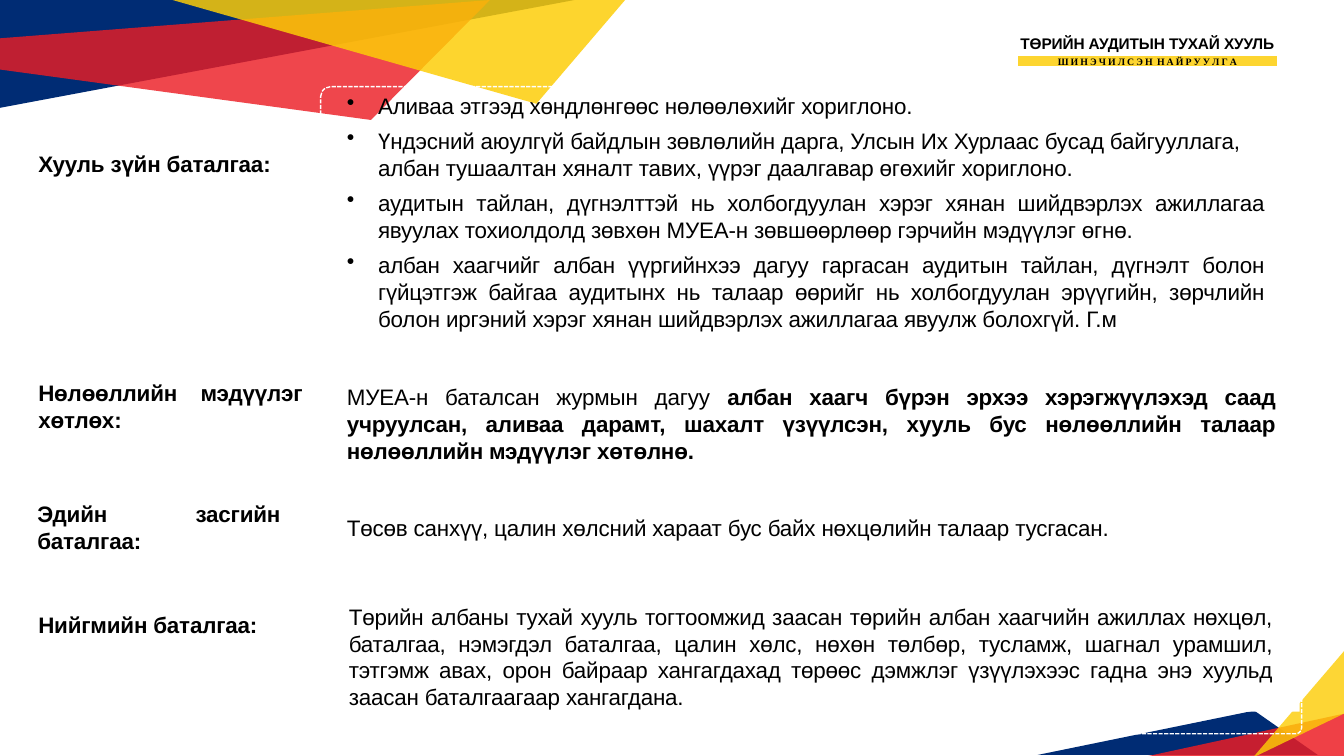
from dataclasses import dataclass

from lxml import etree
from pptx import Presentation
from pptx import util as u
from pptx.dml.color import RGBColor
from pptx.enum import dml, shapes, text
from pptx.oxml.ns import qn


@dataclass(frozen=True)
class Theme:
    navy: str = "002C74"
    red: str = "EC1C23"
    yellow: str = "FDCD07"
    banner: str = "FDD530"
    white: str = "FFFFFF"
    black: str = "000000"
    sans: str = "Arial"
    serif: str = "Times New Roman"
    body: float = 16
    heading: float = 11
    small: float = 7


class Page:
    def __init__(self, slide, theme):
        self.slide = slide
        self.theme = theme

    def fill(self, shape, color, alpha=100):
        shape.fill.solid()
        shape.fill.fore_color.rgb = RGBColor.from_string(color)
        if alpha < 100:
            tint = shape.fill._xPr.find(qn("a:solidFill"))[0]
            etree.SubElement(tint, qn("a:alpha")).set("val", str(alpha * 1000))

    def polygon(self, points, color, alpha=100):
        corners = [(u.Inches(x), u.Inches(y)) for x, y in points]
        builder = self.slide.shapes.build_freeform(*corners[0], scale=1.0)
        builder.add_line_segments(corners[1:], close=True)
        shape = builder.convert_to_shape()
        shape.shadow.inherit = False
        self.fill(shape, color, alpha)
        shape.line.fill.background()

    def block(self, kind, area, color=None):
        shape = self.slide.shapes.add_shape(kind, *map(u.Inches, area))
        shape.shadow.inherit = False
        if color:
            self.fill(shape, color)
        else:
            shape.fill.background()
        shape.line.fill.background()
        return shape

    def outline(self, area, radius):
        frame = self.block(shapes.MSO_SHAPE.ROUNDED_RECTANGLE, area)
        frame.adjustments[0] = radius / area[3]
        self.stroke(frame, 1)
        frame.line.dash_style = dml.MSO_LINE.SQUARE_DOT

    def stroke(self, shape, width):
        shape.line.color.rgb = RGBColor.from_string(self.theme.white)
        shape.line.width = u.Pt(width)

    def textbox(self, area):
        return self.slide.shapes.add_textbox(*map(u.Inches, area))

    def margins(self, box, left=0, top=0.01, right=0):
        frame = box.text_frame
        frame.word_wrap = True
        frame.vertical_anchor = text.MSO_ANCHOR.TOP
        frame.margin_left, frame.margin_top = u.Inches(left), u.Inches(top)
        frame.margin_right, frame.margin_bottom = u.Inches(right), 0

    def paragraph(self, para, spans, align=text.PP_ALIGN.LEFT, size=None, face=None,
                  bold=False, before=0, indent=None, bullet=False, tab=None):
        para.alignment = align
        para.space_before = u.Pt(before)
        settings = para._p.get_or_add_pPr()
        if indent is not None:
            settings.set("marL", str(u.Inches(indent)))
        if bullet:
            settings.set("indent", str(u.Inches(-0.31)))
            etree.SubElement(settings, qn("a:buChar")).set("char", "•")
        if tab:
            stops = etree.SubElement(settings, qn("a:tabLst"))
            stop = etree.SubElement(stops, qn("a:tab"))
            stop.set("pos", str(u.Inches(tab)))
            stop.set("algn", "l")
        para.font.size = u.Pt(size or self.theme.body)
        para.font.name = face or self.theme.sans
        para.font.color.rgb = RGBColor.from_string(self.theme.black)
        if len(spans) == 1:
            para.font.bold = bold
        for position, words in enumerate(spans):
            span = para.add_run()
            span.text = words
            if len(spans) > 1:
                span.font.bold = position % 2 == 1
            span._r.get_or_add_rPr().set("spc", "-10")

    def label(self, area, lines, **style):
        box = self.textbox(area)
        self.margins(box)
        for position, line in enumerate(lines):
            frame = box.text_frame
            para = frame.add_paragraph() if position else frame.paragraphs[0]
            self.paragraph(para, [line], bold=True, **style)

    def bullets(self, area, items):
        box = self.textbox(area)
        self.margins(box, top=0.1, right=0.12)
        for position, (words, marked) in enumerate(items):
            frame = box.text_frame
            para = frame.add_paragraph() if position else frame.paragraphs[0]
            self.paragraph(para, [words], align=text.PP_ALIGN.JUSTIFY, indent=0.33,
                           bullet=marked, before=6 if marked and position else 0)

    def panel(self, area, spans, right, align=text.PP_ALIGN.JUSTIFY):
        box = self.block(shapes.MSO_SHAPE.RECTANGLE, area, self.theme.white)
        self.margins(box, left=0.24, top=0.19, right=right)
        self.paragraph(box.text_frame.paragraphs[0], spans, align=align)

    def banner(self, area, words):
        box = self.block(shapes.MSO_SHAPE.RECTANGLE, area, self.theme.banner)
        self.stroke(box, 2)
        self.margins(box)
        self.paragraph(box.text_frame.paragraphs[0], [words], bold=True,
                       align=text.PP_ALIGN.CENTER, size=self.theme.small,
                       face=self.theme.serif)


LEGAL_GUARANTEES = [
    ("Аливаа этгээд хөндлөнгөөс нөлөөлөхийг хориглоно.", True),
    ("Үндэсний аюулгүй байдлын зөвлөлийн дарга, Улсын Их Хурлаас бусад байгууллага,", True),
    ("албан тушаалтан хяналт тавих, үүрэг даалгавар өгөхийг хориглоно.", False),
    ("аудитын тайлан, дүгнэлттэй нь холбогдуулан хэрэг хянан шийдвэрлэх ажиллагаа "
     "явуулах тохиолдолд зөвхөн МУЕА-н зөвшөөрлөөр гэрчийн мэдүүлэг өгнө.", True),
    ("албан хаагчийг албан үүргийнхээ дагуу гаргасан аудитын тайлан, дүгнэлт болон "
     "гүйцэтгэж байгаа аудитынх нь талаар өөрийг нь холбогдуулан эрүүгийн, зөрчлийн "
     "болон иргэний хэрэг хянан шийдвэрлэх ажиллагаа явуулж болохгүй. Г.м", True),
]
INFLUENCE_RECORD = [
    "МУЕА-н баталсан журмын дагуу ",
    "албан хаагч бүрэн эрхээ хэрэгжүүлэхэд саад учруулсан, аливаа дарамт, шахалт "
    "үзүүлсэн, хууль бус нөлөөллийн талаар нөлөөллийн мэдүүлэг хөтөлнө.",
]
ECONOMIC_GUARANTEE = ["Төсөв санхүү, цалин хөлсний хараат бус байх нөхцөлийн талаар тусгасан."]
SOCIAL_GUARANTEE = [
    "Төрийн албаны тухай хууль тогтоомжид заасан төрийн албан хаагчийн ажиллах нөхцөл, "
    "баталгаа, нэмэгдэл баталгаа, цалин хөлс, нөхөн төлбөр, тусламж, шагнал урамшил, "
    "тэтгэмж авах, орон байраар хангагдахад төрөөс дэмжлэг үзүүлэхээс гадна энэ хуульд "
    "заасан баталгаагаар хангагдана.",
]


def main():
    deck = Presentation()
    deck.slide_width, deck.slide_height = u.Inches(13.33), u.Inches(7.5)
    theme = Theme()
    page = Page(deck.slides.add_slide(deck.slide_layouts[6]), theme)

    page.polygon([(5.7, 0), (0, 0), (0, 1.07)], theme.navy)
    page.polygon([(4.86, 0), (0, 0.38), (0, 0.69), (3.68, 1.19)], theme.red, 81)
    page.polygon([(6.2, 0), (1.71, 0), (5.32, 1.03)], theme.yellow, 84)
    page.polygon([(12.44, 7.05), (10.29, 7.49), (13.07, 7.49)], theme.navy)
    page.polygon([(13.33, 7.08), (11.39, 7.5), (13.33, 7.5)], theme.red, 84)
    page.polygon([(13.33, 6.46), (12.44, 7.5), (12.46, 7.5), (13.33, 7.08)], theme.yellow, 81)

    page.label((10.08, 0.33, 2.6, 0.2), ["ТӨРИЙН АУДИТЫН ТУХАЙ ХУУЛЬ"],
               align=text.PP_ALIGN.CENTER, size=theme.heading)
    page.outline((3.18, 0.86, 9.71, 2.51), 0.1)
    page.bullets((3.42, 0.81, 9.25, 2.5), LEGAL_GUARANTEES)
    page.label((0.38, 1.48, 2.37, 0.28), ["Хууль зүйн баталгаа:"])

    page.label((0.38, 3.75, 2.65, 0.56), ["Нөлөөллийн\tмэдүүлэг хөтлөх:"], tab=1.61)
    page.outline((3.18, 3.6, 9.71, 1.06), 0.05)
    page.panel((3.2, 3.61, 9.68, 1), INFLUENCE_RECORD, 0.22)

    page.outline((3.18, 4.9, 9.71, 0.64), 0.03)
    page.panel((3.2, 4.91, 9.68, 0.46), ECONOMIC_GUARANTEE, 0.22, text.PP_ALIGN.LEFT)
    page.label((1.94, 4.95, 0.9, 0.28), ["засгийн"])
    page.label((0.37, 4.95, 1.1, 0.56), ["Эдийн", "баталгаа:"])

    page.outline((3.2, 5.78, 9.71, 1.5), 0.06)
    page.panel((3.22, 5.79, 9.67, 1.27), SOCIAL_GUARANTEE, 0.26)
    page.label((0.38, 6.05, 2.23, 0.28), ["Нийгмийн баталгаа:"])
    page.banner((10.08, 0.54, 2.6, 0.13), "Ш И Н Э Ч И Л С Э Н  Н А Й Р У У Л Г А")

    deck.save("out.pptx")


if __name__ == "__main__":
    main()
